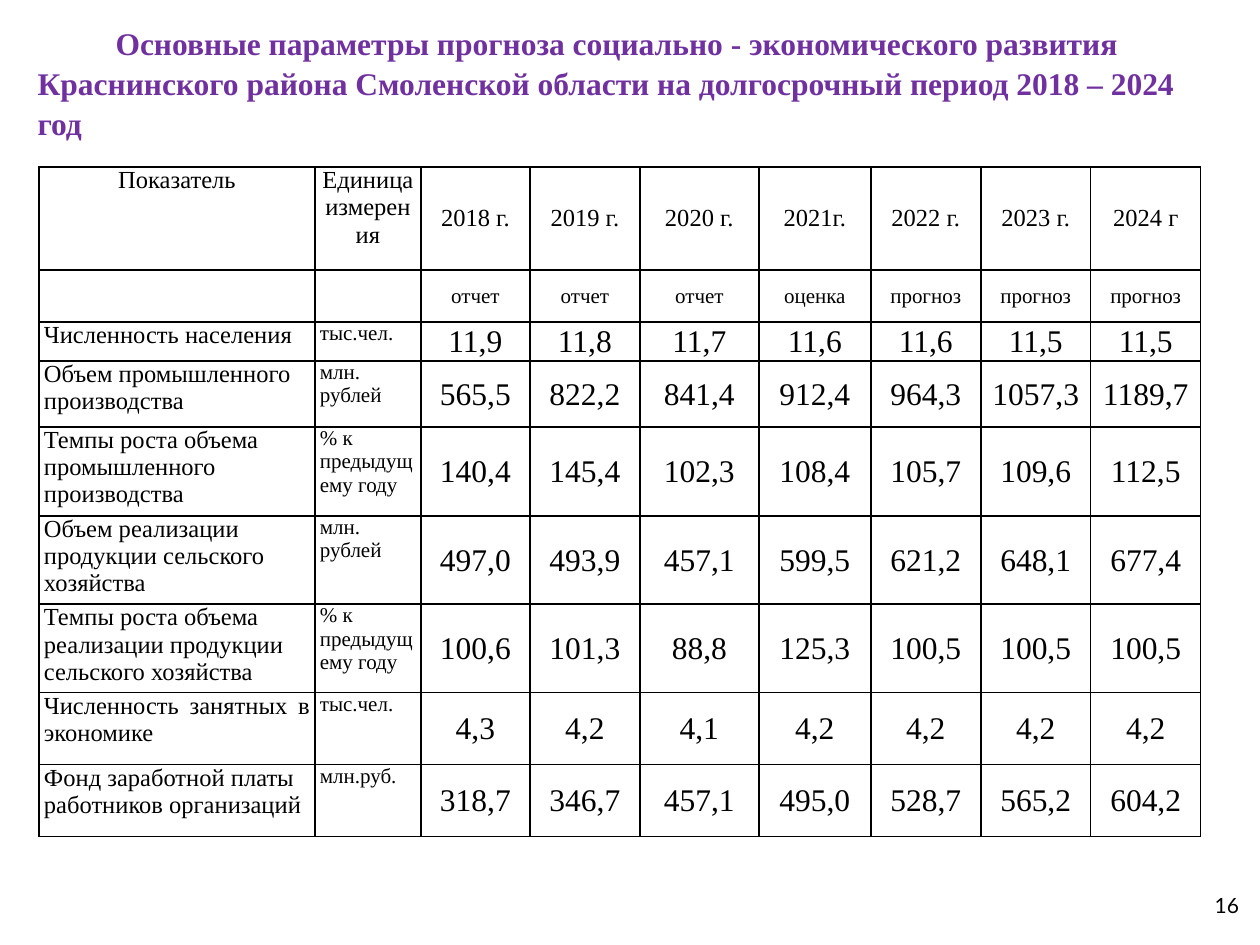
"""Build the slide with the long-term forecast table of the district."""
import lxml.etree
import pptx
import pptx.dml.color
import pptx.enum.text
import pptx.oxml
import pptx.oxml.ns
import pptx.util

PURPLE = pptx.dml.color.RGBColor(0x70, 0x30, 0xA0)
BLACK = pptx.dml.color.RGBColor(0, 0, 0)
SERIF, SANS = "Times New Roman", "Lato"
ALIGN = pptx.enum.text.PP_ALIGN
ANCHOR = pptx.enum.text.MSO_ANCHOR

TITLE = ("Основные параметры прогноза социально - экономического развития "
         "Краснинского района Смоленской области на долгосрочный период 2018 – 2024 год")
COLS = [276, 106, 109, 110, 119, 112, 110, 110, 110]
HEIGHTS = [103, 52, 38, 66, 89, 88, 88, 72, 72]
HEADER = ["Показатель", "Единица измерения", "2018 г.", "2019 г.", "2020 г.",
          "2021г.", "2022 г.", "2023 г.", "2024 г"]
STATUS = ["отчет"] * 3 + ["оценка"] + ["прогноз"] * 3
INDICATORS = [
    ("Численность населения", "тыс.чел.", "11,9 11,8 11,7 11,6 11,6 11,5 11,5"),
    ("Объем промышленного производства", "млн. рублей",
     "565,5 822,2 841,4 912,4 964,3 1057,3 1189,7"),
    ("Темпы роста объема промышленного\nпроизводства", "% к предыдущему году",
     "140,4 145,4 102,3 108,4 105,7 109,6 112,5"),
    ("Объем реализации\nпродукции сельского хозяйства", "млн. рублей",
     "497,0 493,9 457,1 599,5 621,2 648,1 677,4"),
    ("Темпы роста объема реализации продукции сельского хозяйства",
     "% к предыдущему году", "100,6 101,3 88,8 125,3 100,5 100,5 100,5"),
    ("Численность занятных в экономике", "тыс.чел.", "4,3 4,2 4,1 4,2 4,2 4,2 4,2"),
    ("Фонд заработной платы работников организаций", "млн.руб.",
     "318,7 346,7 457,1 495,0 528,7 565,2 604,2"),
]


def px(n):
    return pptx.util.Emu(round(n * 914400 / 126))


def write(tf, text, size=14, font=SERIF, color=BLACK, bold=False,
          align=ALIGN.LEFT, spacing=None, indent=0):
    for i, line in enumerate(text.split("\n")):
        p = tf.add_paragraph() if i else tf.paragraphs[0]
        p.alignment = align
        if spacing:
            p.line_spacing = spacing
        if indent:
            p._p.get_or_add_pPr().set("indent", str(px(indent)))
        r = p.add_run()
        r.text = line
        r.font.size = pptx.util.Pt(size)
        r.font.name = font
        r.font.bold = bold
        r.font.color.rgb = color


class Deck:
    """Hold the presentation style and the current slide."""

    def __init__(self, width, height):
        self.prs = pptx.Presentation()
        self.prs.slide_width, self.prs.slide_height = px(width), px(height)
        self.s = self.prs.slides.add_slide(self.prs.slide_layouts[5])

    def title(self, text, x, y, w, h, **style):
        sp = self.s.shapes.title
        sp.left, sp.top, sp.width, sp.height = map(px, (x, y, w, h))
        tf = sp.text_frame
        tf.word_wrap = True
        tf.auto_size = pptx.enum.text.MSO_AUTO_SIZE.SHAPE_TO_FIT_TEXT
        tf.vertical_anchor = ANCHOR.TOP
        write(tf, text, **style)

    def text(self, text, x, y, w, h, **style):
        tf = self.s.shapes.add_textbox(*map(px, (x, y, w, h))).text_frame
        tf.word_wrap = True
        tf.margin_left = tf.margin_right = tf.margin_top = tf.margin_bottom = 0
        write(tf, text, **style)

    def table(self, x, y, cols, heights):
        frame = self.s.shapes.add_table(
            len(heights), len(cols), px(x), px(y), px(sum(cols)), px(sum(heights)))
        table = frame.table
        table.first_row = table.horz_banding = False
        for col, w in zip(table.columns, cols):
            col.width = px(w)
        for row, h in zip(table.rows, heights):
            row.height = px(h)
        for cell in table.iter_cells():
            self.border(cell)
            cell.fill.background()
        return table

    def border(self, cell):
        tcPr = cell._tc.get_or_add_tcPr()
        for side in ("lnL", "lnR", "lnT", "lnB"):
            ln = lxml.etree.SubElement(tcPr, pptx.oxml.ns.qn(f"a:{side}"), w="12700")
            fill = lxml.etree.SubElement(ln, pptx.oxml.ns.qn("a:solidFill"))
            lxml.etree.SubElement(fill, pptx.oxml.ns.qn("a:srgbClr"), val=str(BLACK))

    def cell(self, cell, text, anchor=ANCHOR.TOP, side=5, top=0, **style):
        cell.margin_left = cell.margin_right = px(side)
        cell.margin_top, cell.margin_bottom = px(top), 0
        cell.vertical_anchor = anchor
        write(cell.text_frame, text, **style)


def main():
    deck = Deck(1260, 945)
    deck.title(TITLE, 25, 16, 1211, 126, size=18, color=PURPLE, bold=True,
               spacing=1.05, indent=78)
    table = deck.table(39, 167, COLS, HEIGHTS)
    for c, text in enumerate(HEADER):
        deck.cell(table.cell(0, c), text, align=ALIGN.CENTER,
                  anchor=ANCHOR.TOP if c < 2 else ANCHOR.MIDDLE)
    for c, text in enumerate(STATUS, 2):
        deck.cell(table.cell(1, c), text, anchor=ANCHOR.MIDDLE, size=12,
                  align=ALIGN.CENTER)
    for r, (name, unit, values) in enumerate(INDICATORS, 2):
        deck.cell(table.cell(r, 0), name,
                  align=ALIGN.JUSTIFY if name.startswith("Численность") else ALIGN.LEFT)
        deck.cell(table.cell(r, 1), unit, size=12)
        for c, value in enumerate(values.split(), 2):
            deck.cell(table.cell(r, c), value, anchor=ANCHOR.MIDDLE, side=1, top=1,
                      size=18, align=ALIGN.CENTER)
    deck.text("16", 1134, 892, 105, 34, size=12, font=SANS, align=ALIGN.RIGHT)
    deck.prs.save("out.pptx")


if __name__ == "__main__":
    main()
